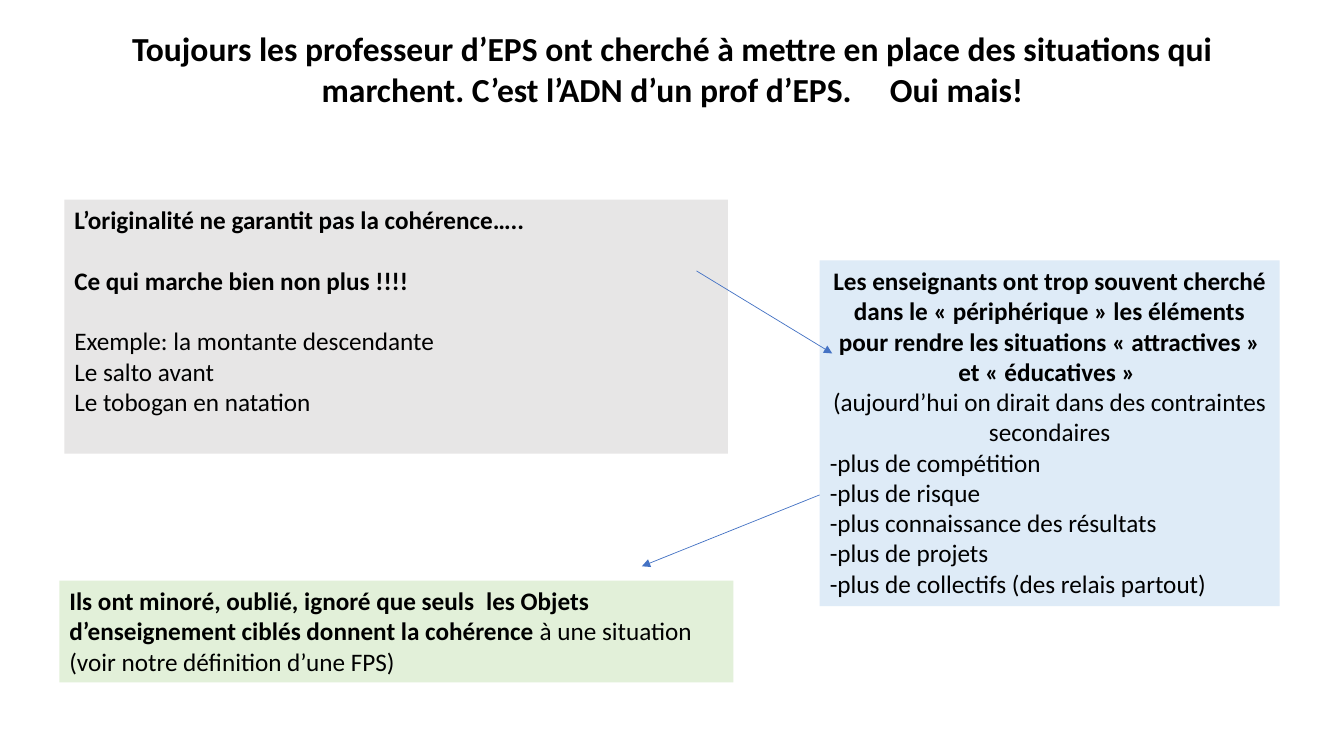
"""Build the slide on originality and coherence in physical education teaching."""
import dataclasses

import lxml.etree
import pptx
import pptx.dml.color
import pptx.enum.shapes
import pptx.enum.text
import pptx.oxml.ns
import pptx.util

Pt = pptx.util.Pt
LEFT = pptx.enum.text.PP_ALIGN.LEFT
CENTER = pptx.enum.text.PP_ALIGN.CENTER


@dataclasses.dataclass(frozen=True)
class Theme:
    """Colours, font and sizes of the slide."""
    font: str = "Calibri"
    title_size: float = 24
    body_size: float = 18
    blank_line: float = 21.6
    arrow_width: float = 0.5
    ink: str = "000000"
    grey: str = "E7E6E6"
    blue: str = "DEEBF7"
    green: str = "E2F0D9"
    arrow: str = "4472C4"


@dataclasses.dataclass(frozen=True)
class Span:
    """A stretch of text with one weight and letter spacing."""
    text: str
    bold: bool = False
    spacing: float = 0


@dataclasses.dataclass(frozen=True)
class Line:
    """A paragraph made of spans."""
    spans: tuple
    align: int = LEFT
    before: float = 0


THEME = Theme()


def color(value):
    """Turn a hex value into a colour."""
    return pptx.dml.color.RGBColor.from_string(value)


def line(text, bold=False, align=LEFT, before=0):
    """Make a paragraph of a single span."""
    return Line((Span(text, bold),), align, before)


def place(box, left, top, width, height):
    """Set the frame of a box in points."""
    box.left, box.top = Pt(left), Pt(top)
    box.width, box.height = Pt(width), Pt(height)


def fill_box(box, fill):
    """Give a box a plain fill without outline."""
    box.fill.solid()
    box.fill.fore_color.rgb = color(fill)
    box.line.fill.background()


def write_span(paragraph, span, size):
    """Add one formatted run to a paragraph."""
    run = paragraph.add_run()
    run.text = span.text
    run.font.name = THEME.font
    run.font.size = Pt(size)
    run.font.bold = span.bold
    run.font.color.rgb = color(THEME.ink)
    if span.spacing:
        run._r.get_or_add_rPr().set("spc", str(round(span.spacing * 100)))


def write_lines(box, lines, size):
    """Fill a box with unbulleted paragraphs."""
    frame = box.text_frame
    frame.word_wrap = True
    frame.auto_size = pptx.enum.text.MSO_AUTO_SIZE.NONE
    frame.vertical_anchor = pptx.enum.text.MSO_ANCHOR.TOP
    for index, content in enumerate(lines):
        paragraph = frame.add_paragraph() if index else frame.paragraphs[0]
        paragraph.alignment = content.align
        paragraph.line_spacing = 1.0
        paragraph.space_before = Pt(content.before)
        paragraph.space_after = Pt(0)
        properties = paragraph._p.get_or_add_pPr()
        properties.set("marL", "0")
        properties.set("indent", "0")
        lxml.etree.SubElement(properties, pptx.oxml.ns.qn("a:buNone"))
        for span in content.spans:
            write_span(paragraph, span, size)


def add_panel(slide, frame, fill, lines):
    """Add a filled rectangle with text."""
    panel = slide.shapes.add_shape(
        pptx.enum.shapes.MSO_SHAPE.RECTANGLE, *map(Pt, frame))
    panel.shadow.inherit = False
    fill_box(panel, fill)
    write_lines(panel, lines, THEME.body_size)


def add_arrow(slide, start, end):
    """Add a thin straight arrow."""
    arrow = slide.shapes.add_connector(
        pptx.enum.shapes.MSO_CONNECTOR.STRAIGHT, *map(Pt, start + end))
    arrow.line.color.rgb = color(THEME.arrow)
    arrow.line.width = Pt(THEME.arrow_width)
    qn = pptx.oxml.ns.qn
    outline = arrow.line._get_or_add_ln()
    lxml.etree.SubElement(outline, qn("a:tailEnd")).set("type", "triangle")
    lxml.etree.SubElement(arrow._element.spPr, qn("a:effectLst"))


def main():
    """Build and save the slide."""
    deck = pptx.Presentation()
    deck.slide_width, deck.slide_height = Pt(960), Pt(540)
    slide = deck.slides.add_slide(deck.slide_layouts[1])

    title = slide.shapes.title
    place(title, 42.5, 16.5, 875.5, 65.5)
    write_lines(title, [Line((
        Span("Toujours les professeur d’EPS ont cherché à mettre en place des "
             "situations qui marchent. C’est l’ADN d’un prof d’EPS.", True),
        Span(" ", True, 21.7),
        Span("Oui mais!", True)), CENTER)], THEME.title_size)

    add_panel(slide, (46, 142.6, 474, 181.5), THEME.grey, [
        line("L’originalité ne garantit pas la cohérence…..", True),
        line("Ce qui marche bien non plus !!!!", True, before=THEME.blank_line),
        line("Exemple: la montante descendante", before=THEME.blank_line),
        line("Le salto avant"),
        line("Le tobogan en natation")])

    causes = slide.placeholders[1]
    place(causes, 585.5, 186, 328.5, 247)
    fill_box(causes, THEME.blue)
    write_lines(causes, [
        line("Les enseignants ont trop souvent cherché dans le « périphérique » "
             "les éléments pour rendre les situations « attractives » "
             "et « éducatives » ", True, CENTER),
        line("(aujourd’hui on dirait dans des contraintes secondaires",
             align=CENTER),
        line("-plus de compétition"),
        line("-plus de risque"),
        line("-plus connaissance des résultats"),
        line("-plus de projets"),
        line("-plus de collectifs (des relais partout)")], THEME.body_size)

    add_panel(slide, (42.5, 414.7, 481.5, 72.7), THEME.green, [
        Line((Span("Ils ont minoré, oublié, ignoré que seuls", True),
              Span(" ", True, 4.1),
              Span("les Objets d’enseignement ciblés donnent la cohérence ", True),
              Span("à une situation"))),
        line("(voir notre définition d’une FPS)")])

    add_arrow(slide, (497.5, 193.5), (594.5, 252.5))
    add_arrow(slide, (585.5, 353.5), (458.5, 404.5))
    deck.save("out.pptx")


if __name__ == "__main__":
    main()
